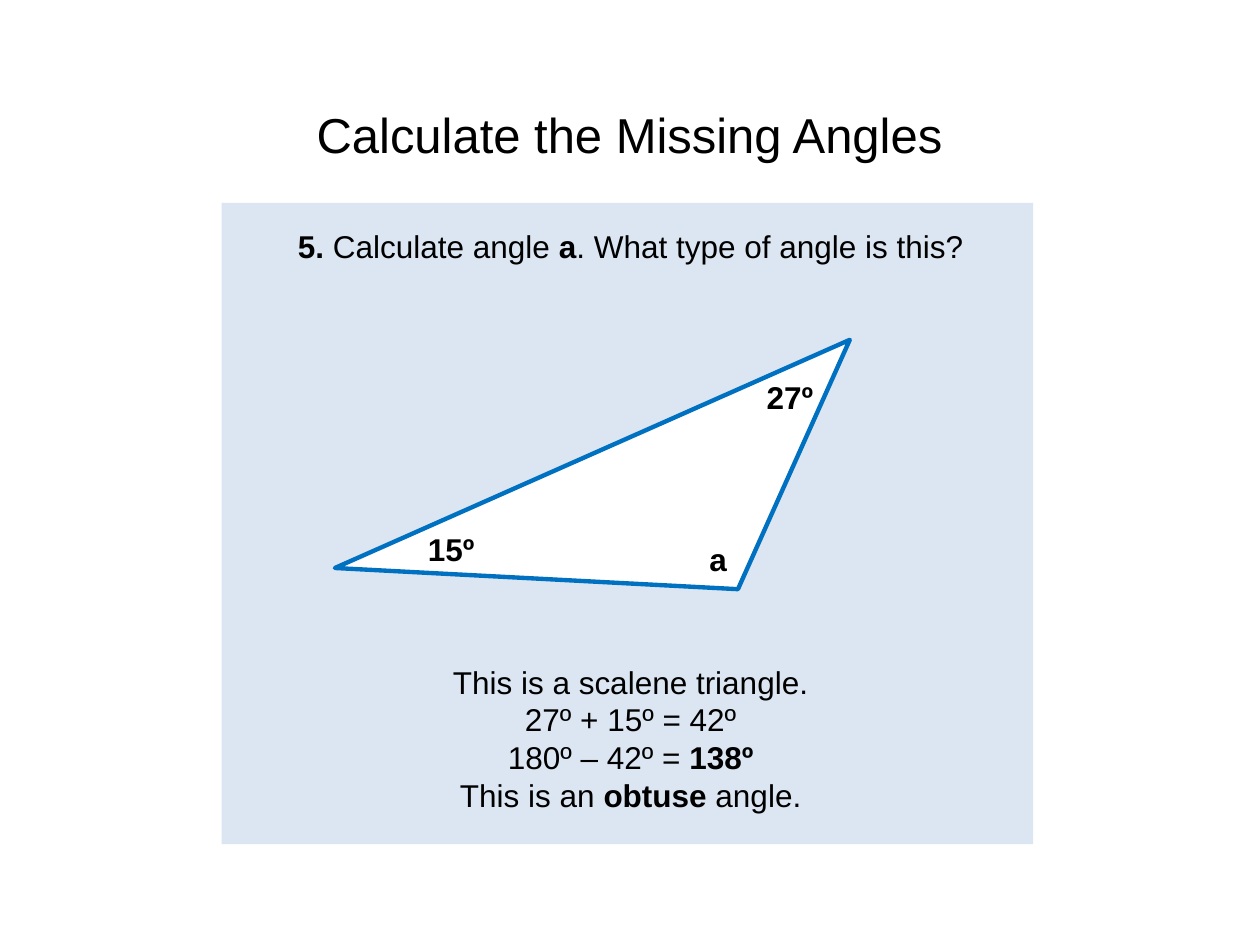
import pptx
import pptx.dml.color
import pptx.enum.shapes
import pptx.enum.text
import pptx.util
from pptx.util import Inches

SHAPES = pptx.enum.shapes.MSO_SHAPE


def color(hex_string):
    return pptx.dml.color.RGBColor.from_string(hex_string)


def write(frame, lines, size=18):
    """Fill a frame with centred lines, each a list of (text, bold) runs."""
    frame.word_wrap = True
    for number, line in enumerate(lines):
        paragraph = frame.add_paragraph() if number else frame.paragraphs[0]
        paragraph.alignment = pptx.enum.text.PP_ALIGN.CENTER
        for text, bold in line:
            run = paragraph.add_run()
            run.text = text
            run.font.name = "Arial"
            run.font.size = pptx.util.Pt(size)
            run.font.bold = bold
            run.font.color.rgb = color("000000")


presentation = pptx.Presentation()
presentation.slide_width = Inches(10)
presentation.slide_height = Inches(7.5)
slide = presentation.slides.add_slide(presentation.slide_layouts[5])

# Title
title = slide.shapes.title
title.left, title.top = Inches(0.5), Inches(0.52)
title.width, title.height = Inches(8.99), Inches(1.09)
title.text_frame.vertical_anchor = pptx.enum.text.MSO_ANCHOR.MIDDLE
write(title.text_frame, [[("Calculate the Missing Angles", False)]], 28)

# Question panel
panel = slide.shapes.add_shape(
    SHAPES.RECTANGLE, Inches(1.76), Inches(1.61), Inches(6.44), Inches(5.09))
panel.shadow.inherit = False
panel.fill.solid()
panel.fill.fore_color.rgb = color("DCE6F2")
panel.line.fill.background()

# Scalene triangle
triangle = slide.shapes.add_shape(
    SHAPES.ISOSCELES_TRIANGLE, Inches(2.76), Inches(3.54), Inches(4.47), Inches(1.45))
triangle.adjustments[0] = 0.361
triangle.rotation = 156.1
triangle.shadow.inherit = False
triangle.fill.solid()
triangle.fill.fore_color.rgb = color("FFFFFF")
triangle.line.color.rgb = color("0070C0")
triangle.line.width = pptx.util.Pt(2.5)

# Question, angle labels and worked answer
question = [[("5. ", True), ("Calculate angle ", False), ("a", True),
             (". What type of angle is this?", False)]]
answer = [
    [("This is a scalene triangle.", False)],
    [("27º + 15º = 42º", False)],
    [("180º – 42º = ", False), ("138º", True)],
    [("This is an ", False), ("obtuse", True), (" angle.", False)],
]
texts = [
    (1.02, 1.75, 7.97, 0.4, question),
    (5.5, 4.24, 0.4, 0.4, [[("a", True)]]),
    (3.21, 4.16, 0.74, 0.4, [[("15º", True)]]),
    (5.9, 2.95, 0.74, 0.4, [[("27º", True)]]),
    (1.48, 5.21, 7.05, 1.31, answer),
]
for left, top, width, height, lines in texts:
    box = slide.shapes.add_textbox(
        Inches(left), Inches(top), Inches(width), Inches(height))
    write(box.text_frame, lines)

presentation.save("out.pptx")
